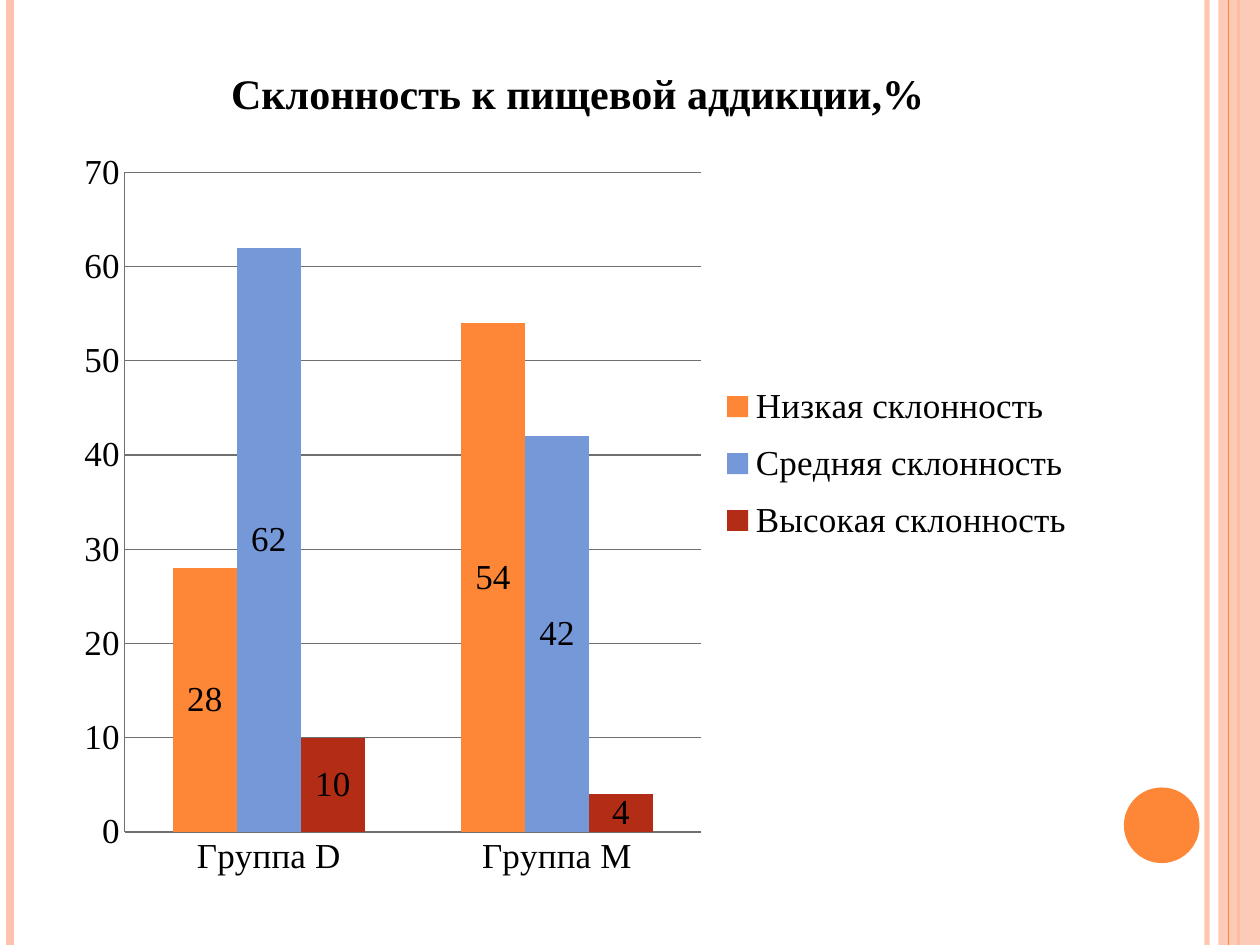
from lxml.etree import SubElement
from pptx import Presentation
from pptx.chart.data import CategoryChartData
from pptx.dml.color import RGBColor
from pptx.enum.chart import XL_CHART_TYPE as ChartType
from pptx.enum.chart import XL_LABEL_POSITION as LabelPosition
from pptx.enum.chart import XL_LEGEND_POSITION as LegendPosition
from pptx.enum.chart import XL_TICK_MARK as TickMark
from pptx.enum.shapes import MSO_CONNECTOR as Connector
from pptx.enum.shapes import MSO_SHAPE as Shape
from pptx.oxml import parse_xml
from pptx.oxml.ns import nsdecls, qn
from pptx.util import Pt

PX = 9144  # 100 px to the inch
WIDTH, HEIGHT = 1000, 750
PEACH = RGBColor(0xFE, 0xC3, 0xAE)
ORANGE = RGBColor(0xFE, 0x86, 0x37)
BLUE = RGBColor(0x75, 0x98, 0xD9)
RED = RGBColor(0xB3, 0x2C, 0x16)
BLACK = RGBColor(0, 0, 0)
GRAY = RGBColor(0x70, 0x70, 0x70)
FONT = "Times New Roman"

TITLE = "Склонность к пищевой аддикции,%"
GROUPS = ["Группа D", "Группа M"]
SERIES = [
    ("Низкая склонность", (28, 54), ORANGE),
    ("Средняя склонность", (62, 42), BLUE),
    ("Высокая склонность", (10, 4), RED),
]


def set_opacity(shape, percent):
    color = next(shape._element.spPr.iter(qn("a:srgbClr")))
    SubElement(color, qn("a:alpha")).set("val", str(percent * 1000))


def add_stripe(slide, x, top, height, color, weight):
    """Draw a vertical line."""
    stripe = slide.shapes.add_connector(
        Connector.STRAIGHT, x * PX, top * PX, x * PX, (top + height) * PX)
    stripe.line.color.rgb = color
    stripe.line.width = Pt(weight)
    SubElement(stripe._element.spPr, qn("a:effectLst"))
    return stripe


def add_plain_shape(slide, kind, left, top, width, height, color):
    shape = slide.shapes.add_shape(
        kind, left * PX, top * PX, width * PX, height * PX)
    shape.shadow.inherit = False
    shape.fill.solid()
    shape.fill.fore_color.rgb = color
    shape.line.fill.background()
    return shape


def add_frame(slide, left, top, width, height):
    """Draw the stripes, side band and disc at the edges of the box."""
    right = left + width
    inner_stripe = add_stripe(slide, right - 42, top, height, PEACH, 3)
    set_opacity(inner_stripe, 93)
    add_stripe(slide, left + 8, top, height, PEACH, 4.5)
    add_stripe(slide, right - 17, top, height, ORANGE, 1.5)
    band = add_plain_shape(
        slide, Shape.RECTANGLE, right - 33, top, 33, height, PEACH)
    set_opacity(band, 87)
    add_stripe(slide, right - 25, top, height, ORANGE, 0.75)
    add_plain_shape(
        slide, Shape.OVAL, right - 108, top + height - 125, 60, 60, ORANGE)


def set_font(font, size, bold=False):
    font.name = FONT
    font.size = Pt(size)
    font.bold = bold
    font.color.rgb = BLACK


def make_layout(x, y, width, height, inner=False):
    """Return a manual layout, in fractions of the chart."""
    target = '<c:layoutTarget val="inner"/>' if inner else ""
    return parse_xml(
        f'<c:layout {nsdecls("c")}><c:manualLayout>{target}'
        '<c:xMode val="edge"/><c:yMode val="edge"/>'
        f'<c:x val="{x}"/><c:y val="{y}"/>'
        f'<c:w val="{width}"/><c:h val="{height}"/>'
        '</c:manualLayout></c:layout>')


def add_addiction_chart(slide, left, top, width, height):
    data = CategoryChartData()
    data.categories = GROUPS
    for name, values, _ in SERIES:
        data.add_series(name, values)
    chart = slide.shapes.add_chart(
        ChartType.COLUMN_CLUSTERED, left * PX, top * PX,
        width * PX, height * PX, data).chart
    set_font(chart.font, 20)

    chart.has_title = True
    title_run = chart.chart_title.text_frame.paragraphs[0].add_run()
    title_run.text = TITLE
    set_font(title_run.font, 24, bold=True)
    chart.chart_title.include_in_layout = False

    plot = chart.plots[0]
    plot.gap_width = 150
    plot.overlap = 0
    plot.vary_by_categories = False
    for series, (_, _, color) in zip(plot.series, SERIES):
        series.format.fill.solid()
        series.format.fill.fore_color.rgb = color
        labels = series.data_labels
        labels.show_value = True
        labels.position = LabelPosition.CENTER
        set_font(labels.font, 20)

    value_axis = chart.value_axis
    value_axis.minimum_scale = 0
    value_axis.maximum_scale = 70
    value_axis.major_unit = 10
    value_axis.has_major_gridlines = True
    value_axis.major_gridlines.format.line.color.rgb = GRAY
    for axis in (chart.category_axis, value_axis):
        axis.major_tick_mark = TickMark.NONE
        axis.minor_tick_mark = TickMark.NONE
        axis.format.line.color.rgb = GRAY
        set_font(axis.tick_labels.font, 20)

    chart.has_legend = True
    legend = chart.legend
    legend.position = LegendPosition.RIGHT
    legend.include_in_layout = False
    set_font(legend.font, 20)

    plot_area = chart._chartSpace.chart.plotArea
    for layout in plot_area.findall(qn("c:layout")):
        plot_area.remove(layout)
    plot_area.insert(0, make_layout(0.06, 0.16, 0.56, 0.77, inner=True))
    for layout in legend._element.findall(qn("c:layout")):
        legend._element.remove(layout)
    legend._element.find(qn("c:legendPos")).addnext(
        make_layout(0.64, 0.39, 0.34, 0.22))


def main():
    presentation = Presentation()
    presentation.slide_width = WIDTH * PX
    presentation.slide_height = HEIGHT * PX
    slide = presentation.slides.add_slide(presentation.slide_layouts[6])
    add_frame(slide, 0, 0, WIDTH, HEIGHT)
    add_addiction_chart(slide, 50, 28, 817, 680)
    presentation.save("out.pptx")


if __name__ == "__main__":
    main()
